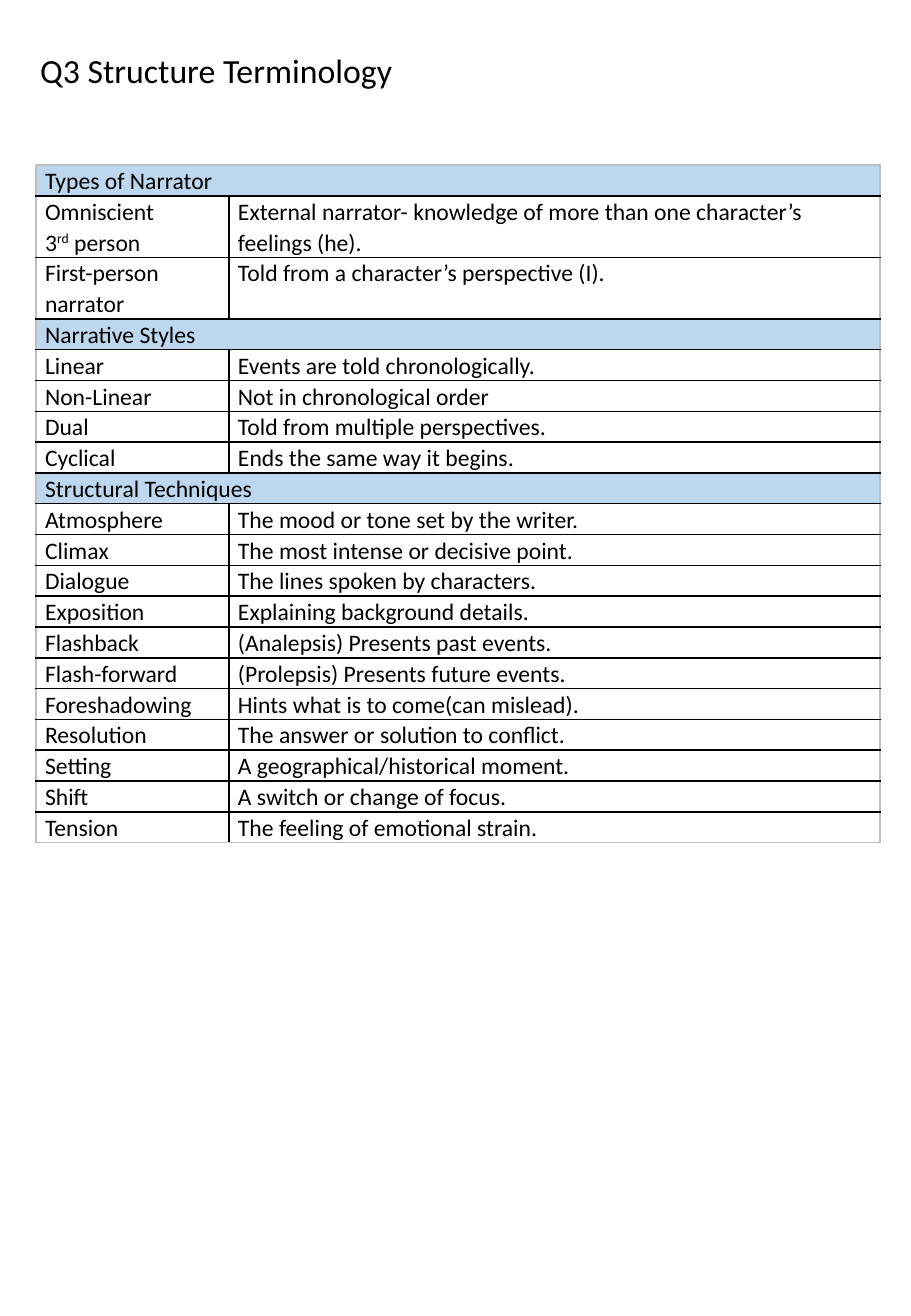
from lxml import etree
from pptx import Presentation
from pptx.dml.color import RGBColor
from pptx.enum.text import MSO_ANCHOR, PP_ALIGN
from pptx.oxml.ns import qn
from pptx.util import Pt

LEFT = PP_ALIGN.LEFT
MIDDLE = MSO_ANCHOR.MIDDLE
TOP = MSO_ANCHOR.TOP
FONT = "Calibri"
COLORS = {"text": "000000", "heading": "BDD7EE", "inner": "000000", "outer": "BFBFBF"}
SCALE = 914400 / 121.5
ROW_HEIGHT = 30
SECTIONS = {
    "Types of Narrator": [
        ("Omniscient\n3rd person", "External narrator- knowledge of more than one character’s feelings (he)."),
        ("First-person narrator", "Told from a character’s perspective (I)."),
    ],
    "Narrative Styles": [
        ("Linear", "Events are told chronologically."),
        ("Non-Linear", "Not in chronological order"),
        ("Dual", "Told from multiple perspectives."),
        ("Cyclical", "Ends the same way it begins."),
    ],
    "Structural Techniques": [
        ("Atmosphere", "The mood or tone set by the writer."),
        ("Climax", "The most intense or decisive point."),
        ("Dialogue", "The lines spoken by characters."),
        ("Exposition", "Explaining background details."),
        ("Flashback", "(Analepsis) Presents past events."),
        ("Flash-forward", "(Prolepsis) Presents future events."),
        ("Foreshadowing", "Hints what is to come(can mislead)."),
        ("Resolution", "The answer or solution to conflict."),
        ("Setting", "A geographical/historical moment."),
        ("Shift", "A switch or change of focus."),
        ("Tension", "The feeling of emotional strain."),
    ],
}


def px(length):
    return round(length * SCALE)


def format_paragraph(paragraph, size, spacing):
    paragraph.alignment = LEFT
    paragraph.line_spacing = spacing
    paragraph.font.name = FONT
    paragraph.font.size = Pt(size)
    paragraph.font.color.rgb = RGBColor.from_string(COLORS["text"])


presentation = Presentation()
presentation.slide_width = px(911)
presentation.slide_height = px(1316)
slide = presentation.slides.add_slide(presentation.slide_layouts[5])

title = slide.shapes.title
title.left, title.top, title.width, title.height = px(28), px(0), px(848), px(146)
title.text_frame.text = "Q3 Structure Terminology"
title.text_frame.vertical_anchor = MIDDLE
format_paragraph(title.text_frame.paragraphs[0], 20, 0.9)

rows = []
for heading, terms in SECTIONS.items():
    rows += [(heading, ""), *terms]
last_row = len(rows) - 1

table_frame = slide.shapes.add_table(
    len(rows), 2, px(36), px(165), px(844), px(ROW_HEIGHT * (len(rows) + 2)))
table = table_frame.table
table.first_row = False
table.horz_banding = False
table.columns[0].width = px(193)
table.columns[1].width = px(651)

for row_index, texts in enumerate(rows):
    is_heading = texts[0] in SECTIONS
    is_double = row_index in (1, 2)
    table.rows[row_index].height = px(ROW_HEIGHT * (2 if is_double else 1))
    if is_heading:
        table.cell(row_index, 0).merge(table.cell(row_index, 1))
    for column_index, text in enumerate(texts):
        cell = table.cell(row_index, column_index)
        cell.margin_left = cell.margin_right = px(9)
        cell.margin_top = cell.margin_bottom = 0
        cell.vertical_anchor = TOP
        cell.text_frame.text = text
        for paragraph in cell.text_frame.paragraphs:
            format_paragraph(paragraph, 14, 1.07)
        if is_heading:
            cell.fill.solid()
            cell.fill.fore_color.rgb = RGBColor.from_string(COLORS["heading"])
        else:
            cell.fill.background()
        outer_sides = {
            "L": column_index == 0,
            "R": column_index == 1 or is_heading,
            "T": row_index == 0,
            "B": row_index == last_row,
        }
        properties = cell._tc.get_or_add_tcPr()
        for position, (side, is_outer) in enumerate(outer_sides.items()):
            line = etree.Element(qn(f"a:ln{side}"), w=str(Pt(1)))
            fill = etree.SubElement(line, qn("a:solidFill"))
            color = COLORS["outer" if is_outer else "inner"]
            etree.SubElement(fill, qn("a:srgbClr"), val=color)
            properties.insert(position, line)

third_person = table.cell(1, 0).text_frame.paragraphs[1]
third_person.runs[0].text = "3"
ordinal = third_person.add_run()
ordinal.text = "rd"
ordinal._r.get_or_add_rPr().set("baseline", "30000")
third_person.add_run().text = " person"

presentation.save("out.pptx")
